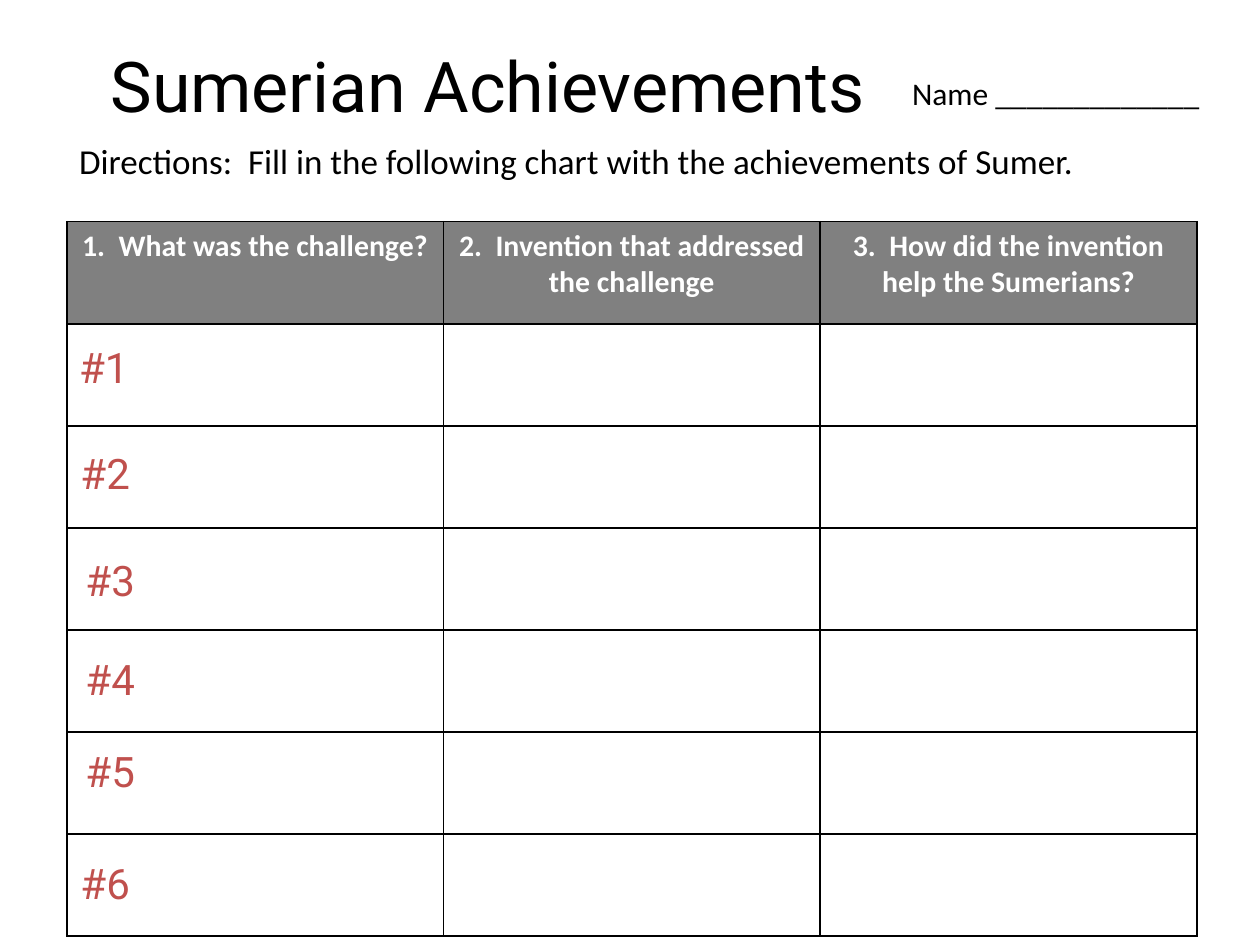
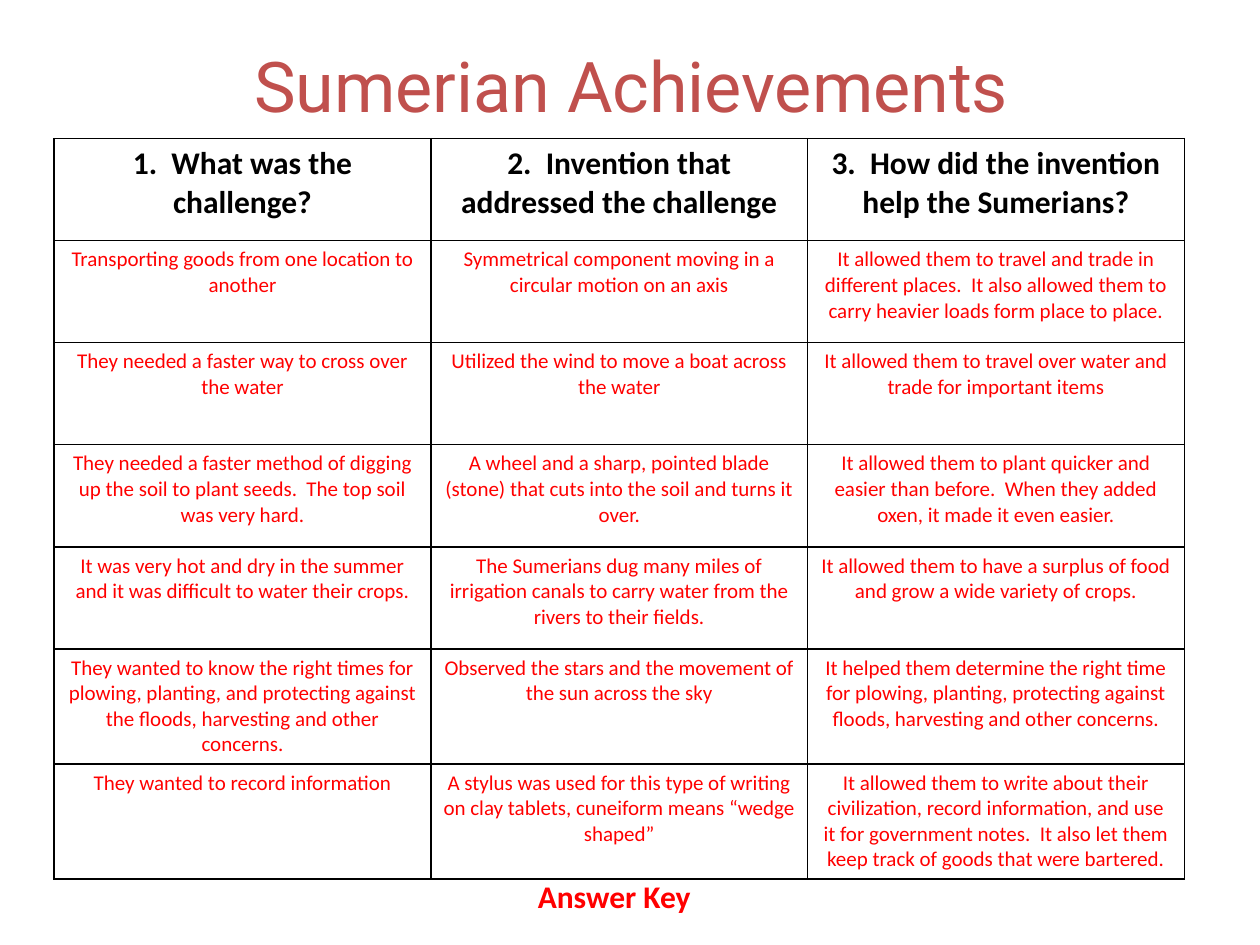
"""Build a Sumerian achievements worksheet and its answer key."""
from dataclasses import dataclass

from lxml import etree
from pptx import Presentation
from pptx.dml.color import RGBColor
from pptx.enum.text import MSO_ANCHOR, MSO_AUTO_SIZE, PP_ALIGN
from pptx.oxml.ns import qn
from pptx.util import Inches, Pt

CENTER, LEFT = PP_ALIGN.CENTER, PP_ALIGN.LEFT
TOP = MSO_ANCHOR.TOP
NONE, GROW = MSO_AUTO_SIZE.NONE, MSO_AUTO_SIZE.SHAPE_TO_FIT_TEXT

TITLE = "Sumerian Achievements"
HEADS = [
    "1.  What was the challenge?",
    "2.  Invention that addressed the challenge",
    "3.  How did the invention help the Sumerians?",
]
ANSWERS = [
    ("Transporting goods from one location to another",
     "Symmetrical component moving in a circular motion on an axis",
     "It allowed them to travel and trade in different places.  "
     "It also allowed them to carry heavier loads form place to place."),
    ("They needed a faster way to cross over the water",
     "Utilized the wind to move a boat across the water",
     "It allowed them to travel over water and trade for important items"),
    ("They needed a faster method of digging up the soil to plant seeds.  "
     "The top soil was very hard.",
     "A wheel and a sharp, pointed blade (stone) that cuts into the soil "
     "and turns it over.",
     "It allowed them to plant quicker and easier than before.  "
     "When they added oxen, it made it even easier."),
    ("It was very hot and dry in the summer and it was difficult to water "
     "their crops.",
     "The Sumerians dug many miles of irrigation canals to carry water "
     "from the rivers to their fields.",
     "It allowed them to have a surplus of food and grow a wide variety "
     "of crops."),
    ("They wanted to know the right times for plowing, planting, and "
     "protecting against the floods, harvesting and other concerns.",
     "Observed the stars and the movement of the sun across the sky",
     "It helped them determine the right time for plowing, planting, "
     "protecting against floods, harvesting and other concerns."),
    ("They wanted to record information",
     "A stylus was used for this type of writing on clay tablets, "
     "cuneiform means “wedge shaped”",
     "It allowed them to write about their civilization, record "
     "information, and use it for government notes.  It also let them "
     "keep track of goods that were bartered."),
]
BLANKS = [("",) * len(HEADS)] * len(ANSWERS)
MARKS = [(0.53, 2.66), (0.54, 3.5), (0.58, 4.35),
         (0.58, 5.14), (0.58, 5.87), (0.54, 6.76)]
DIRECTIONS = ("Directions:  Fill in the following chart with the "
              "achievements of Sumer.")


@dataclass(frozen=True)
class Theme:
    """Colours, fonts, type sizes and grid sizes."""
    black: str = "000000"
    white: str = "FFFFFF"
    gray: str = "808080"
    brick: str = "C0504D"
    red: str = "FF0000"
    body: str = "Calibri"
    show: str = "Roboto"
    title: int = 40
    mark: int = 24
    lead: int = 20
    note: int = 18
    head: int = 17
    cell: int = 12
    line: int = 1
    col: float = 2.99
    row: float = 0.81


T = Theme()


def write(frame, text, size, color, font=T.body, bold=False, align=LEFT):
    """Set the text of a frame and format it."""
    frame.text = text
    para = frame.paragraphs[0]
    para.alignment = align
    for run in para.runs:
        face = run.font
        face.name, face.size, face.bold = font, Pt(size), bold
        face.color.rgb = RGBColor.from_string(color)


def add_note(slide, box, text, size, color, **style):
    """Add a text box."""
    frame = slide.shapes.add_textbox(*map(Inches, box)).text_frame
    frame.word_wrap, frame.auto_size = True, GROW
    write(frame, text, size, color, **style)


def add_page(deck, left, color):
    """Add a slide with its title."""
    slide = deck.slides.add_slide(deck.slide_layouts[5])
    title = slide.shapes.title
    title.left, title.top = Inches(left), Inches(0.29)
    title.width, title.height = Inches(7.12), Inches(0.77)
    frame = title.text_frame
    frame.word_wrap, frame.auto_size = True, NONE
    frame.vertical_anchor = TOP
    write(frame, TITLE, T.title, color, font=T.show, align=CENTER)
    return slide


def add_edges(cell):
    """Draw the four borders of a cell."""
    props = cell._tc.get_or_add_tcPr()
    for side in ("lnL", "lnR", "lnT", "lnB"):
        line = etree.SubElement(props, qn(f"a:{side}"), w=str(Pt(T.line)))
        fill = etree.SubElement(line, qn("a:solidFill"))
        etree.SubElement(fill, qn("a:srgbClr"), val=T.black)


def add_grid(slide, left, top, rows, size, color, fill):
    """Add the chart of challenges; size, color and fill style its heads."""
    lines = [HEADS, *rows]
    wide, high = T.col * len(HEADS), T.row * len(lines)
    box = map(Inches, (left, top, wide, high))
    table = slide.shapes.add_table(len(lines), len(HEADS), *box).table
    table.first_row = table.horz_banding = False
    for col in table.columns:
        col.width = Inches(T.col)
    for r, line in enumerate(lines):
        table.rows[r].height = Inches(T.row)
        for c, text in enumerate(line):
            cell = table.cell(r, c)
            add_edges(cell)
            cell.fill.solid()
            back = T.white if r else fill
            cell.fill.fore_color.rgb = RGBColor.from_string(back)
            look = (T.cell, T.red) if r else (size, color)
            write(cell.text_frame, text, *look, bold=r == 0, align=CENTER)


def add_sheet(deck):
    """Add the blank worksheet."""
    slide = add_page(deck, 0.31, T.black)
    add_grid(slide, 0.53, 1.76, BLANKS, T.head, T.white, T.gray)
    for num, spot in enumerate(MARKS, 1):
        add_note(slide, (*spot, 0.77, 0.5), f"#{num}", T.mark, T.brick,
                 font=T.show)
    add_note(slide, (0.53, 1.06, 9.14, 0.44), DIRECTIONS, T.lead, T.black)
    add_note(slide, (7.14, 0.54, 2.53, 0.4), "Name _____________",
             T.note, T.black)


def add_key(deck):
    """Add the answer key."""
    slide = add_page(deck, 1.45, T.brick)
    add_grid(slide, 0.43, 1.1, ANSWERS, T.note, T.black, T.white)
    add_note(slide, (1.45, 6.91, 6.85, 0.4), "Answer Key", T.note, T.red,
             bold=True, align=CENTER)


def main():
    """Build and save the deck."""
    deck = Presentation()
    deck.slide_width, deck.slide_height = Inches(10), Inches(7.5)
    add_sheet(deck)
    add_key(deck)
    deck.save("out.pptx")


if __name__ == "__main__":
    main()
